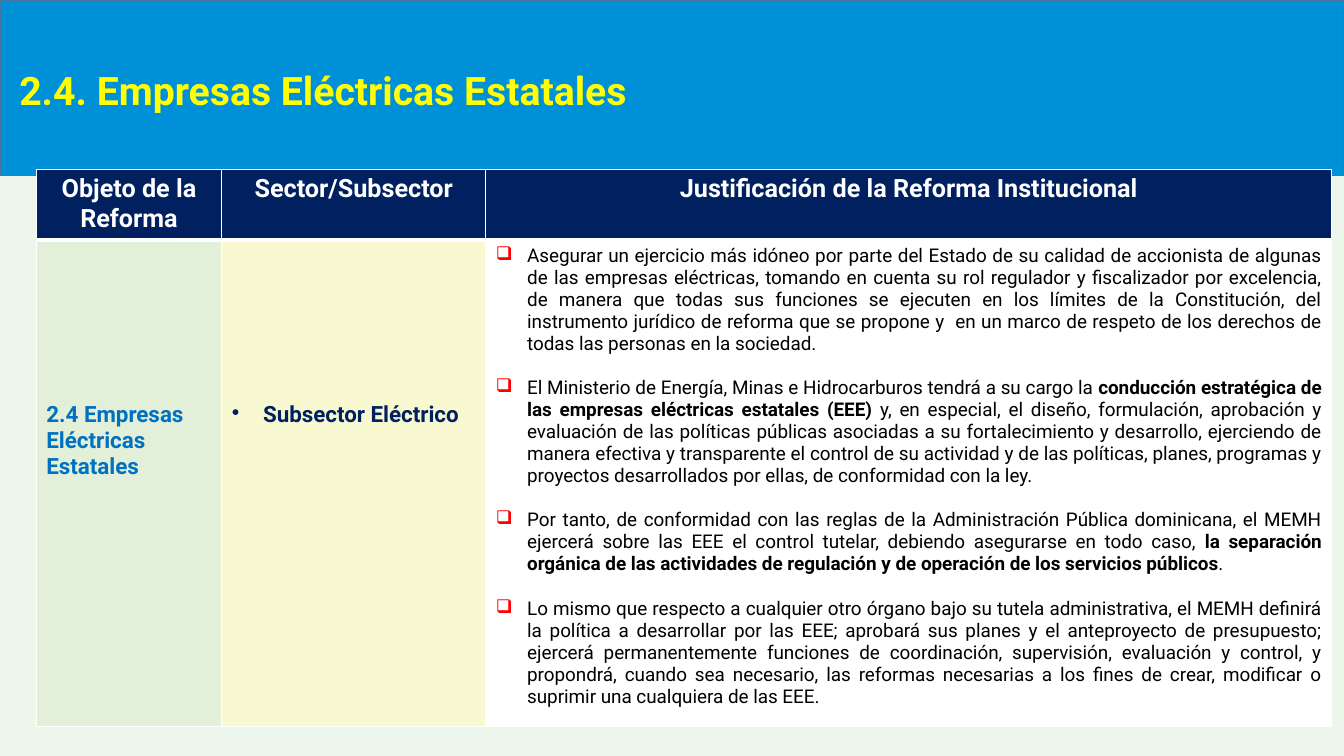
from dataclasses import dataclass

from lxml.etree import SubElement
from pptx import Presentation
from pptx.dml.color import RGBColor
from pptx.enum.shapes import MSO_SHAPE
from pptx.enum.text import MSO_ANCHOR, PP_ALIGN
from pptx.oxml.ns import qn
from pptx.util import Emu, Inches, Pt


@dataclass(frozen=True)
class Theme:
    font: str = "Roboto"
    page: str = "ECF6EB"
    banner: str = "0090D7"
    banner_line: str = "43739E"
    title: str = "FFFF00"
    navy: str = "002060"
    blue: str = "0070C0"
    green: str = "E2F0D9"
    cream: str = "F8F9D1"
    white: str = "FFFFFF"
    black: str = "000000"
    red: str = "FF0000"
    title_size: float = 28
    header_size: float = 18
    label_size: float = 16
    body_size: float = 13.5


@dataclass(frozen=True)
class Bullet:
    char: str
    color: str


@dataclass(frozen=True)
class TextStyle:
    size: float
    color: str
    bold: bool | None = True
    align: PP_ALIGN = PP_ALIGN.LEFT
    bullet: Bullet | None = None
    gap: float = 0


@dataclass(frozen=True)
class Span:
    text: str
    bold: bool = False


@dataclass(frozen=True)
class CellSpec:
    paras: list[list[Span]]
    style: TextStyle
    fill: str
    borders: dict[str, float]
    top_margin: float = 0.05


THEME = Theme()
WIDTH, HEIGHT = Inches(13.33), Inches(7.5)
GRID = 100  # the page has 100 columns and 100 rows
COLUMN_SPANS = (13.8, 19.65, 62.95)
ROW_SPANS = (9.2, 64.4)
INDENT = Inches(0.31)

TITLE = TextStyle(THEME.title_size, THEME.title)
HEADER = TextStyle(THEME.header_size, THEME.white, align=PP_ALIGN.CENTER)
TOPIC = TextStyle(THEME.label_size, THEME.blue)
SECTOR = TextStyle(THEME.label_size, THEME.navy, bullet=Bullet("•", THEME.navy))
REASON = TextStyle(THEME.body_size, THEME.black, None, PP_ALIGN.JUSTIFY,
                   Bullet("❑", THEME.red), gap=15.8)

HEADER_BORDERS = {"L": 1, "R": 1, "T": 1, "B": 3}
BODY_BORDERS = {"L": 1, "R": 1, "B": 1}
LABEL_TOP = 1.61

REASONS = [
    [Span("Asegurar un ejercicio más idóneo por parte del Estado de su calidad de accionista de "
          "algunas de las empresas eléctricas, tomando en cuenta su rol regulador y fiscalizador "
          "por excelencia, de manera que todas sus funciones se ejecuten en los límites de la "
          "Constitución, del instrumento jurídico de reforma que se propone y  en un marco de "
          "respeto de los derechos de todas las personas en la sociedad.")],
    [Span("El Ministerio de Energía, Minas e Hidrocarburos tendrá a su cargo la "),
     Span("conducción estratégica de las empresas eléctricas estatales (EEE) ", True),
     Span("y, en especial, el diseño, formulación, aprobación y evaluación de las políticas "
          "públicas asociadas a su fortalecimiento y desarrollo, ejerciendo de manera efectiva y "
          "transparente el control de su actividad y de las políticas, planes, programas y "
          "proyectos desarrollados por ellas, de conformidad con la ley.")],
    [Span("Por tanto, de conformidad con las reglas de la Administración Pública dominicana, el "
          "MEMH ejercerá sobre las EEE el control tutelar, debiendo asegurarse en todo caso, "),
     Span("la separación orgánica de las actividades de regulación y de operación de los "
          "servicios públicos", True),
     Span(".")],
    [Span("Lo mismo que respecto a cualquier otro órgano bajo su tutela administrativa, el MEMH "
          "definirá la política a desarrollar por las EEE; aprobará sus planes y el anteproyecto "
          "de presupuesto; ejercerá permanentemente funciones de coordinación, supervisión, "
          "evaluación y control, y propondrá, cuando sea necesario, las reformas necesarias a los "
          "fines de crear, modificar o suprimir una cualquiera de las EEE.")],
]

HEADINGS = ("Objeto de la Reforma", "Sector/Subsector", "Justificación de la Reforma Institucional")
ROWS = (
    [CellSpec([[Span(text)]], HEADER, THEME.navy, HEADER_BORDERS) for text in HEADINGS],
    [
        CellSpec([[Span("2.4 Empresas Eléctricas Estatales")]], TOPIC, THEME.green,
                 BODY_BORDERS, LABEL_TOP),
        CellSpec([[Span("Subsector Eléctrico")]], SECTOR, THEME.cream, BODY_BORDERS, LABEL_TOP),
        CellSpec(REASONS, REASON, THEME.white, BODY_BORDERS),
    ],
)


def columns(count: float) -> Emu:
    return Emu(round(WIDTH * count / GRID))


def rows(count: float) -> Emu:
    return Emu(round(HEIGHT * count / GRID))


def rgb(color: str) -> RGBColor:
    return RGBColor.from_string(color)


def paint(target, color: str) -> None:
    target.fill.solid()
    target.fill.fore_color.rgb = rgb(color)


def add_bullet(para, bullet: Bullet) -> None:
    properties = para._p.get_or_add_pPr()
    properties.set("marL", str(INDENT))
    properties.set("indent", str(-INDENT))
    color = SubElement(properties, qn("a:buClr"))
    SubElement(color, qn("a:srgbClr"), val=bullet.color)
    SubElement(properties, qn("a:buChar"), char=bullet.char)


def write(frame, paras: list[list[Span]], style: TextStyle) -> None:
    """Fill a text frame; a style without bold leaves bold to each span."""
    for index, spans in enumerate(paras):
        para = frame.add_paragraph() if index else frame.paragraphs[0]
        para.alignment = style.align
        if style.bullet:
            add_bullet(para, style.bullet)
        if index:
            para.space_before = Pt(style.gap)
        para.font.name = THEME.font
        para.font.size = Pt(style.size)
        para.font.color.rgb = rgb(style.color)
        para.font.bold = style.bold
        for span in spans:
            run = para.add_run()
            run.text = span.text
            if style.bold is None:
                run.font.bold = span.bold


def add_border(cell, side: str, width: float) -> None:
    properties = cell._tc.get_or_add_tcPr()
    line = SubElement(properties, qn(f"a:ln{side}"), w=str(Pt(width)))
    fill = SubElement(line, qn("a:solidFill"))
    SubElement(fill, qn("a:srgbClr"), val=THEME.white)


def draw_cell(cell, spec: CellSpec) -> None:
    for side, width in spec.borders.items():
        add_border(cell, side, width)
    paint(cell, spec.fill)
    cell.margin_top = Inches(spec.top_margin)
    write(cell.text_frame, spec.paras, spec.style)


def draw_banner(page) -> None:
    banner = page.shapes.add_shape(MSO_SHAPE.RECTANGLE, 0, 0, WIDTH, rows(23.2))
    banner.shadow.inherit = False
    paint(banner, THEME.banner)
    banner.line.color.rgb = rgb(THEME.banner_line)
    banner.line.width = Pt(1)
    box = page.shapes.add_textbox(columns(0.7), rows(1.6), columns(92.35), rows(20.1))
    frame = box.text_frame
    frame.word_wrap = True
    frame.vertical_anchor = MSO_ANCHOR.MIDDLE
    frame.margin_top = Inches(0.09)
    write(frame, [[Span("2.4. Empresas Eléctricas Estatales")]], TITLE)


def draw_table(page) -> None:
    table = page.shapes.add_table(len(ROWS), len(HEADINGS), columns(2.7), rows(22.4),
                                  columns(sum(COLUMN_SPANS)), rows(sum(ROW_SPANS))).table
    table.horz_banding = False
    for column, span in zip(table.columns, COLUMN_SPANS):
        column.width = columns(span)
    for row, span, specs in zip(table.rows, ROW_SPANS, ROWS):
        row.height = rows(span)
        for cell, spec in zip(row.cells, specs):
            draw_cell(cell, spec)


def main() -> None:
    deck = Presentation()
    deck.slide_width, deck.slide_height = WIDTH, HEIGHT
    page = deck.slides.add_slide(deck.slide_layouts[6])
    paint(page.background, THEME.page)
    draw_banner(page)
    draw_table(page)
    deck.save("out.pptx")


if __name__ == "__main__":
    main()
